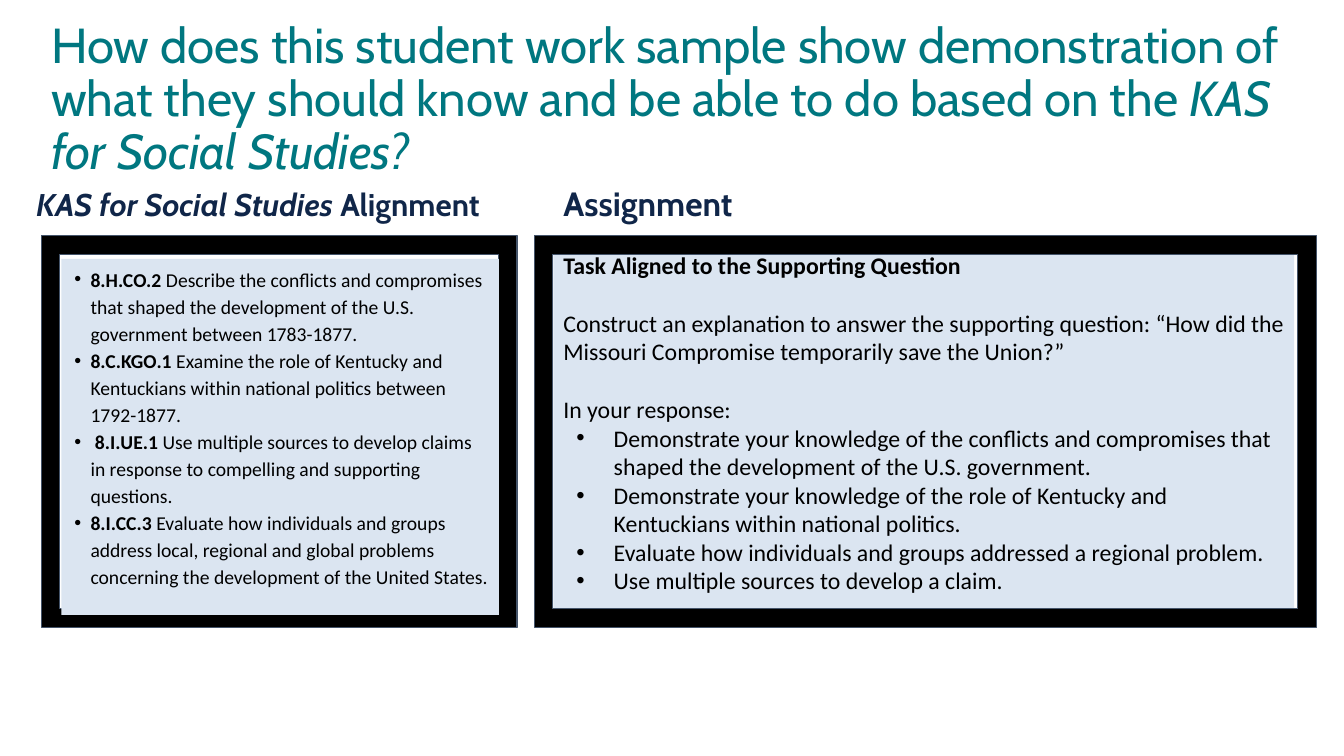
import pptx
import pptx.util
import pptx.dml.color
import pptx.enum.shapes
import pptx.enum.text
import pptx.oxml
import pptx.oxml.ns

Pt = pptx.util.Pt
Rgb = pptx.dml.color.RGBColor.from_string
Kind = pptx.enum.shapes.MSO_SHAPE
Anchor = pptx.enum.text.MSO_ANCHOR

hues = {"teal": "007780", "navy": "102649", "pale": "DBE5F1",
        "black": "000000", "slate": "44546A"}

deck = pptx.Presentation()
deck.slide_width, deck.slide_height = Pt(960), Pt(540)
slide = deck.slides.add_slide(deck.slide_layouts[6])


def write(paras, box, size, font="Cabin", hue="black", fill=None,
          anchor=Anchor.TOP, lead=1.0, hang=None, gaps=(), first=0):
    left, top, wide, high = map(Pt, box)
    if fill:
        shape = slide.shapes.add_shape(Kind.RECTANGLE, left, top, wide, high)
        shape.shadow.inherit = False
        shape.fill.solid()
        shape.fill.fore_color.rgb = Rgb(hues[fill])
        shape.line.fill.background()
    else:
        shape = slide.shapes.add_textbox(left, top, wide, high)
    frame = shape.text_frame
    frame.word_wrap = True
    frame.vertical_anchor = anchor
    for i, runs in enumerate(paras):
        para = frame.paragraphs[0] if i == 0 else frame.add_paragraph()
        para.alignment = pptx.enum.text.PP_ALIGN.LEFT
        para.line_spacing = lead
        para.space_before = Pt(size * 1.22 if i in gaps else 0)
        if hang and i >= first:
            props = para._p.get_or_add_pPr()
            props.set("marL", str(Pt(hang[0])))
            props.set("indent", str(Pt(-hang[1])))
            for mark in (f'<a:buClr %s><a:srgbClr val="{hues[hue]}"/></a:buClr>',
                         '<a:buFont %s typeface="Arial"/>',
                         '<a:buChar %s char="•"/>'):
                props.append(pptx.oxml.parse_xml(
                    mark % pptx.oxml.ns.nsdecls("a")))
        for words, style in runs:
            run = para.add_run()
            run.text = words
            run.font.name = font
            run.font.size = Pt(size)
            run.font.bold = "b" in style
            run.font.italic = "i" in style
            run.font.color.rgb = Rgb(hues[hue])


write([[("How does this student work sample show demonstration of what they "
         "should know and be able to do based on the ", ""),
        ("KAS for Social Studies?", "i")]],
      (29.5, 11.5, 916.5, 121), 35.1, hue="teal", anchor=Anchor.MIDDLE,
      lead=0.9)

write([[("Assignment", "b")]], (395.3, 120.2, 406, 42.5), 24, hue="navy",
      anchor=Anchor.BOTTOM, lead=0.8)

write([[("KAS for Social Studies ", "bi"), ("Alignment", "b")]],
      (18.7, 120.2, 417, 42.5), 22.4, hue="navy", anchor=Anchor.BOTTOM,
      lead=0.9)

tasks = [
    [("Task Aligned to the Supporting Question", "b")],
    [("Construct an explanation to answer the supporting question: “How did "
      "the Missouri Compromise temporarily save the Union?”", "")],
    [("In your response:", "")],
    [("Demonstrate your knowledge of the conflicts and compromises that "
      "shaped the development of the U.S. government.", "")],
    [("Demonstrate your knowledge of the role of Kentucky and Kentuckians "
      "within national politics.", "")],
    [("Evaluate how individuals and groups addressed a regional problem.", "")],
    [("Use multiple sources to develop a claim.", "")],
]
write(tasks, (395.3, 175.7, 529.2, 262.8), 17, font="Calibri", fill="pale",
      hang=(36, 26.6), gaps=(1, 2), first=3)

for left, wide in ((381.6, 558.7), (29.5, 339.8)):
    edge = slide.shapes.add_shape(Kind.FRAME, Pt(left), Pt(168.5), Pt(wide),
                                  Pt(279.4))
    edge.adjustments[0] = 0.047
    edge.shadow.inherit = False
    edge.fill.solid()
    edge.fill.fore_color.rgb = Rgb(hues["black"])
    edge.line.color.rgb = Rgb(hues["slate"])
    edge.line.width = Pt(0.75)

goals = [
    [("8.H.CO.2 ", "b"),
     ("Describe the conflicts and compromises that shaped the development of "
      "the U.S. government between 1783-1877.", "")],
    [("8.C.KGO.1", "b"),
     (" Examine the role of Kentucky and Kentuckians within national politics "
      "between 1792-1877.", "")],
    [(" 8.I.UE.1", "b"),
     (" Use multiple sources to develop claims in response to compelling and "
      "supporting questions.", "")],
    [("8.I.CC.3 ", "b"),
     ("Evaluate how individuals and groups address local, regional and global "
      "problems concerning the development of the United States.", "")],
]
write(goals, (43.9, 185, 312.5, 254.2), 14, font="Calibri", fill="pale",
      lead=1.15, hang=(13.7, 11.5))

deck.save("out.pptx")
